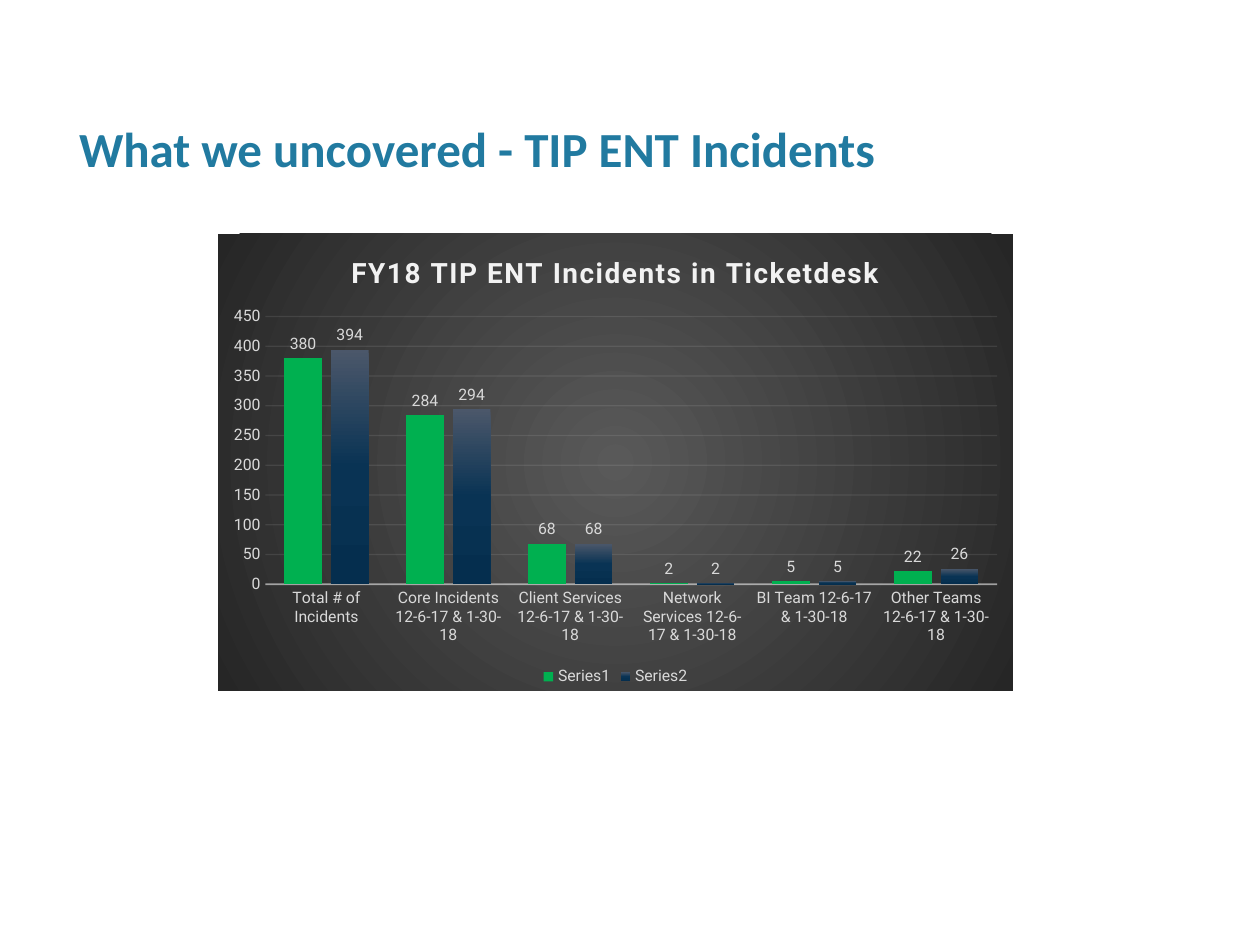
from lxml import etree
from pptx import Presentation
from pptx.chart.data import CategoryChartData
from pptx.dml.color import RGBColor
from pptx.enum import chart as ch, text
from pptx.oxml import parse_xml
from pptx.oxml.ns import nsdecls, qn
from pptx.util import Pt

TITLE = "What we uncovered - TIP ENT Incidents"
CHART_TITLE = "FY18 TIP ENT Incidents in Ticketdesk"
CATEGORIES = [
    "Total # of Incidents",
    "Core Incidents 12-6-17 & 1-30-18",
    "Client Services 12-6-17 & 1-30-18",
    "Network Services 12-6-17 & 1-30-18",
    "BI Team 12-6-17 & 1-30-18",
    "Other Teams 12-6-17 & 1-30-18",
]
SERIES = {
    "Series1": (380, 284, 68, 2, 5, 22),
    "Series2": (394, 294, 68, 2, 5, 26),
}

TEAL = RGBColor(0x21, 0x7A, 0xA0)
GREEN = RGBColor(0x00, 0xB0, 0x50)
LIGHT = RGBColor(0xD9, 0xD9, 0xD9)
PALE = RGBColor(0xF2, 0xF2, 0xF2)
NAVY_STOPS = [
    (0, RGBColor(0x4B, 0x57, 0x6A)),
    (50, RGBColor(0x09, 0x33, 0x54)),
    (100, RGBColor(0x05, 0x2E, 0x4E)),
]
BACK_STOPS = [
    (0, RGBColor(0x59, 0x59, 0x59)),
    (100, RGBColor(0x26, 0x26, 0x26)),
]
DOWNWARD = '<a:lin ang="5400000" scaled="0"/>'
RADIAL = ('<a:path path="circle"><a:fillToRect l="50000" t="50000" '
          'r="50000" b="50000"/></a:path>')

PX = 914400 / 126
TITLE_BOX = (79, 107, 1100, 81)
CHART_BOX = (218, 234, 795, 457)


def emu(*lengths):
    return [round(n * PX) for n in lengths]


def style(font, size, color, bold=False, name="Roboto"):
    font.name, font.size, font.bold = name, Pt(size), bold
    font.color.rgb = color


def gradient(stops, direction):
    gs = "".join(f'<a:gs pos="{pos * 1000}"><a:srgbClr val="{color}"/></a:gs>'
                 for pos, color in stops)
    return parse_xml(f'<a:gradFill {nsdecls("a")} rotWithShape="1">'
                     f'<a:gsLst>{gs}</a:gsLst>{direction}</a:gradFill>')


def pale_line(line, width):
    line.width = Pt(width)
    line.color.rgb = PALE


def set_opacity(root, parent, percent):
    for color in root.xpath(f".//{parent}/c:spPr/a:ln//a:srgbClr"):
        etree.SubElement(color, qn("a:alpha")).set("val", str(percent * 1000))


def add_title(slide):
    sp = slide.shapes.title
    sp.left, sp.top, sp.width, sp.height = emu(*TITLE_BOX)
    tf = sp.text_frame
    tf.text = TITLE
    tf.margin_left = 0
    tf.vertical_anchor = text.MSO_ANCHOR.MIDDLE
    p = tf.paragraphs[0]
    p.alignment = text.PP_ALIGN.LEFT
    style(p.font, 28, TEAL, True, "Calibri")


def format_axes(chart):
    cat, val = chart.category_axis, chart.value_axis
    for axis in (cat, val):
        axis.major_tick_mark = axis.minor_tick_mark = ch.XL_TICK_MARK.NONE
        style(axis.tick_labels.font, 9, LIGHT)
    pale_line(cat.format.line, 1)
    val.minimum_scale, val.maximum_scale, val.major_unit = 0, 450, 50
    val.format.line.fill.background()
    pale_line(val.major_gridlines.format.line, 0.75)
    set_opacity(chart.element, "c:catAx", 54)
    set_opacity(chart.element, "c:majorGridlines", 10)


def format_columns(chart):
    plot = chart.plots[0]
    plot.gap_width, plot.overlap, plot.vary_by_categories = 100, -24, False
    for s in plot.series:
        s.format.line.fill.background()
        labels = s.data_labels
        labels.show_value = True
        labels.position = ch.XL_LABEL_POSITION.OUTSIDE_END
        style(labels.font, 9, LIGHT)
    first, second = plot.series
    first.format.fill.solid()
    first.format.fill.fore_color.rgb = GREEN
    second.format.line.fill.background()
    chart.element.xpath(".//c:ser[2]/c:spPr")[0].insert(
        0, gradient(NAVY_STOPS, DOWNWARD))


def add_incident_chart(slide):
    data = CategoryChartData()
    data.categories = CATEGORIES
    for name, values in SERIES.items():
        data.add_series(name, values)
    chart = slide.shapes.add_chart(
        ch.XL_CHART_TYPE.COLUMN_CLUSTERED, *emu(*CHART_BOX), data).chart
    style(chart.font, 10, LIGHT)

    chart.has_title = True
    chart.chart_title.include_in_layout = False
    tf = chart.chart_title.text_frame
    tf.text = CHART_TITLE
    r = tf.paragraphs[0].runs[0]
    style(r.font, 16, PALE, True)
    r.font._element.set("spc", "100")

    chart.has_legend = True
    chart.legend.position = ch.XL_LEGEND_POSITION.BOTTOM
    chart.legend.include_in_layout = False
    style(chart.legend.font, 9, LIGHT)

    format_axes(chart)
    format_columns(chart)

    area = parse_xml(f'<c:spPr {nsdecls("c", "a")}>'
                     '<a:ln><a:noFill/></a:ln></c:spPr>')
    area.insert(0, gradient(BACK_STOPS, RADIAL))
    chart.element.find(qn("c:chart")).addnext(area)


def main():
    prs = Presentation()
    prs.slide_width, prs.slide_height = emu(1260, 945)
    slide = prs.slides.add_slide(prs.slide_layouts[5])
    add_title(slide)
    add_incident_chart(slide)
    prs.save("out.pptx")


if __name__ == "__main__":
    main()
